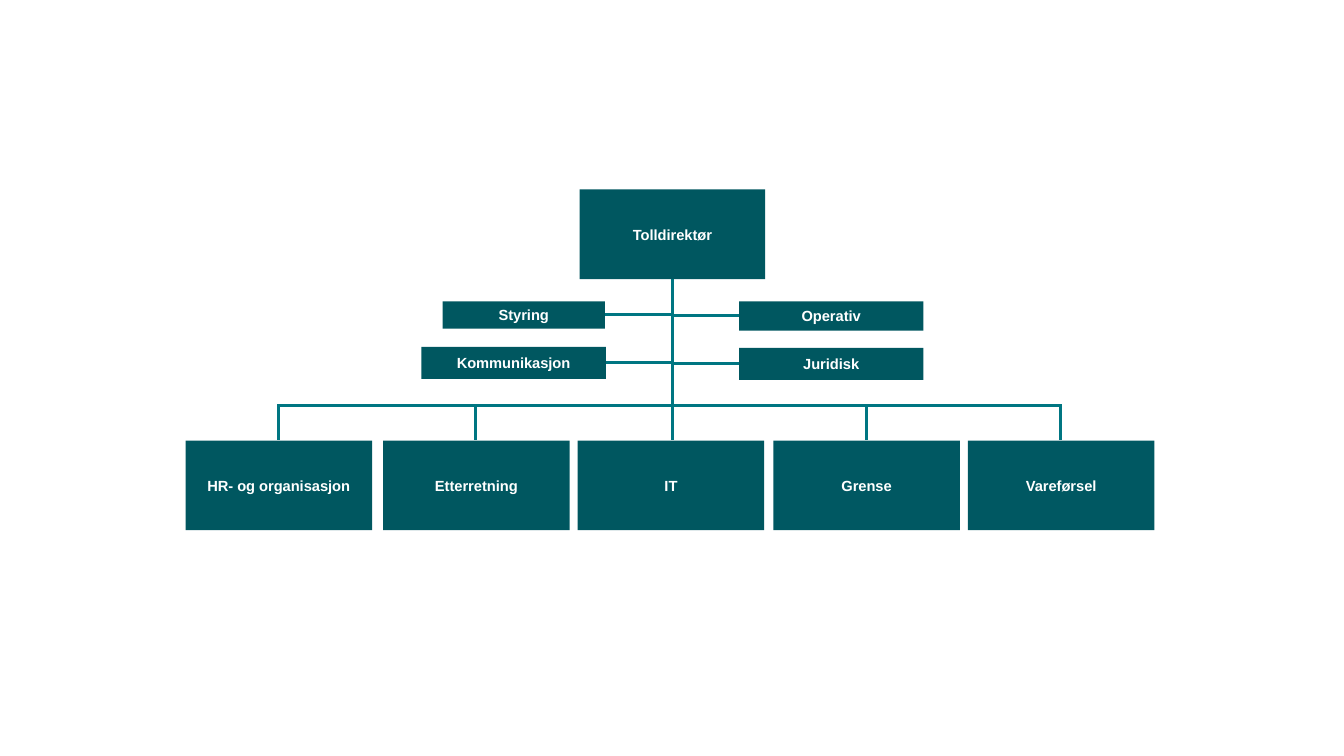
from lxml.etree import SubElement
from pptx import Presentation
from pptx.dml.color import RGBColor
from pptx.enum.shapes import MSO_CONNECTOR, MSO_SHAPE
from pptx.enum.text import MSO_ANCHOR, PP_ALIGN
from pptx.oxml.ns import qn
from pptx.util import Pt

PX = 9144  # EMU per px, 100 px to the inch
DARK, DEEP, TEAL, WHITE = "005760", "005862", "007682", "FFFFFF"
TRUNK, RAIL = 667, 402

HEAD = ("Tolldirektør", 575, 188, 184, 89)
STAFF = [
    ("Styring", 439, 299, 161, 27),
    ("Operativ", 733, 299, 183, 29),
    ("Kommunikasjon", 418, 344, 183, 32),
    ("Juridisk", 733, 345, 183, 32),
]
UNITS = [
    ("HR- og organisasjon", 184, DARK),
    ("Etterretning", 380, DARK),
    ("IT", 573, DARK),
    ("Grense", 767, DEEP),
    ("Vareførsel", 960, DEEP),
]


def color(code):
    return RGBColor.from_string(code)


def line(slide, x1, y1, x2, y2):
    link = slide.shapes.add_connector(
        MSO_CONNECTOR.STRAIGHT, x1 * PX, y1 * PX, x2 * PX, y2 * PX)
    link.line.color.rgb = color(TEAL)
    link.line.width = Pt(2.25)
    SubElement(link._element.spPr, qn("a:effectLst"))


def box(slide, text, left, top, width, height, fill=DARK):
    shape = slide.shapes.add_shape(
        MSO_SHAPE.RECTANGLE, left * PX, top * PX, width * PX, height * PX)
    shape.shadow.inherit = False
    shape.fill.solid()
    shape.fill.fore_color.rgb = color(fill)
    shape.line.fill.background()
    frame = shape.text_frame
    frame.margin_left = frame.margin_right = 0
    frame.margin_top = frame.margin_bottom = 0
    frame.word_wrap = True
    frame.vertical_anchor = MSO_ANCHOR.MIDDLE
    frame.text = text
    para = frame.paragraphs[0]
    para.alignment = PP_ALIGN.CENTER
    font = para.runs[0].font
    font.name, font.size, font.bold = "Arial", Pt(10.5), True
    font.color.rgb = color(WHITE)


def staff(slide):
    """Boxes beside the trunk, each tied to it by a level line."""
    for text, left, top, width, height in STAFF:
        edge = left if left > TRUNK else left + width
        mid = top + height // 2
        line(slide, TRUNK, mid, edge, mid)
        box(slide, text, left, top, width, height)


def units(slide, top, width, height):
    """Bottom row of boxes, hung from one rail."""
    mids = [left + width // 2 for _, left, _ in UNITS]
    line(slide, mids[0], RAIL, mids[-1], RAIL)
    for (text, left, fill), mid in zip(UNITS, mids):
        if text != "IT":  # the trunk itself reaches this box
            line(slide, mid, RAIL - 1, mid, top)
        box(slide, text, left, top, width, height, fill)


def main():
    deck = Presentation()
    deck.slide_width, deck.slide_height = 1333 * PX, 750 * PX
    slide = deck.slides.add_slide(deck.slide_layouts[6])
    line(slide, TRUNK, 277, TRUNK, 437)
    box(slide, *HEAD)
    staff(slide)
    units(slide, 437, 185, 89)
    deck.save("out.pptx")


if __name__ == "__main__":
    main()
